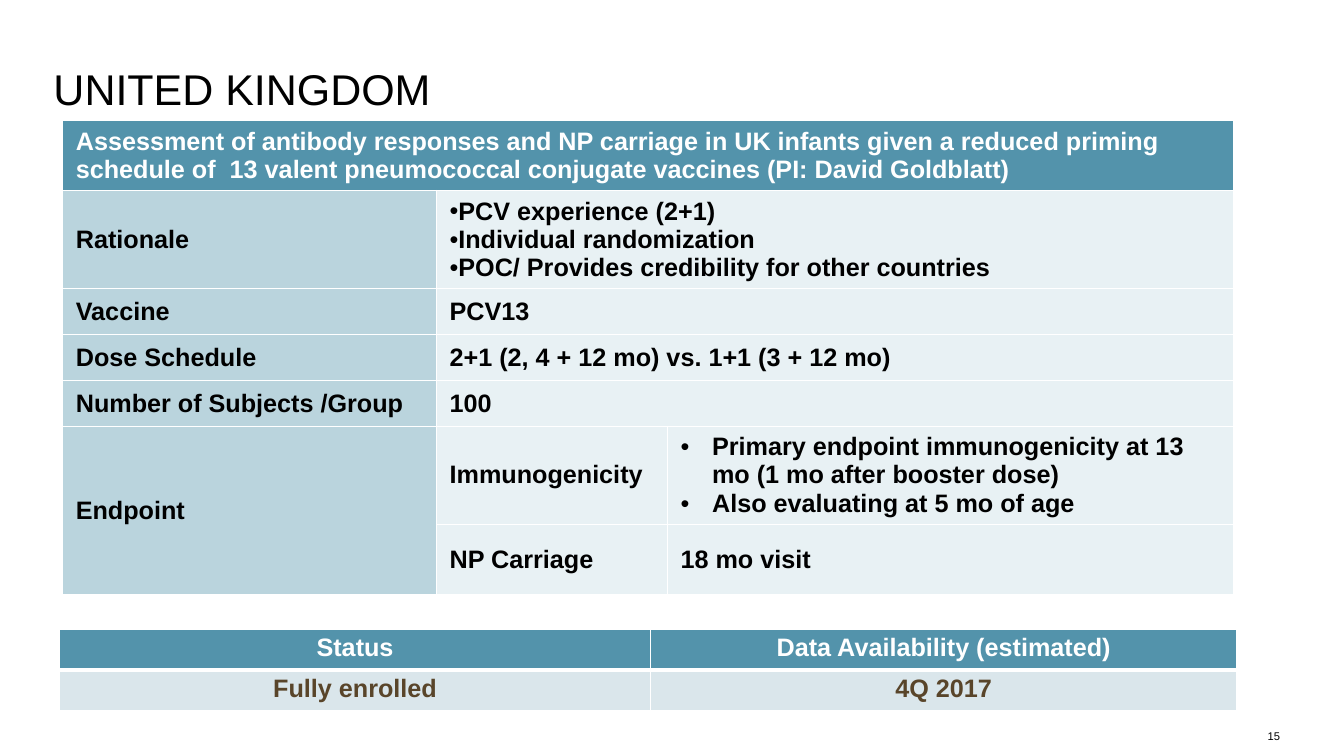
from lxml import etree
from pptx import Presentation
from pptx.dml.color import RGBColor
from pptx.enum import text
from pptx.oxml import ns
from pptx.util import Pt

COLORS = {
    "header": "5393AB", "label": "BAD4DD", "value": "E8F1F4", "status": "DAE6EB",
    "white": "FFFFFF", "black": "000000", "brown": "59452A",
}
MIDDLE, TOP = text.MSO_ANCHOR.MIDDLE, text.MSO_ANCHOR.TOP
LEFT, CENTER, RIGHT = text.PP_ALIGN.LEFT, text.PP_ALIGN.CENTER, text.PP_ALIGN.RIGHT


def write(frame, lines, size, color="black", bold=False, align=LEFT, hang=None):
    """Fill a text frame; hang is the bullet indent in points, None for no bullets."""
    for i, line in enumerate(lines):
        para = frame.paragraphs[0] if i == 0 else frame.add_paragraph()
        para.alignment = align
        if hang is not None:
            props = para._p.get_or_add_pPr()
            props.set("marL", str(Pt(hang)))
            props.set("indent", str(-Pt(hang)))
            etree.SubElement(props, ns.qn("a:buFont"), typeface="Arial")
            etree.SubElement(props, ns.qn("a:buChar"), char="•")
        run = para.add_run()
        run.text = line
        run.font.name, run.font.size, run.font.bold = "Arial", Pt(size), bold
        run.font.color.rgb = RGBColor.from_string(COLORS[color])


def add_grid(left, top, widths, heights, fills, bottom_lines):
    """Add a table with white rules; fills holds one list of colour names per row."""
    grid = slide.shapes.add_table(len(heights), len(widths), Pt(left), Pt(top),
                                  Pt(sum(widths)), Pt(sum(heights))).table
    grid.horz_banding = False
    for column, width in zip(grid.columns, widths):
        column.width = Pt(width)
    for r, height in enumerate(heights):
        grid.rows[r].height = Pt(height)
        for c, fill in enumerate(fills[r]):
            cell = grid.cell(r, c)
            cell.fill.solid()
            cell.fill.fore_color.rgb = RGBColor.from_string(COLORS[fill])
            props = cell._tc.get_or_add_tcPr()
            top_line = bottom_lines[r - 1] if r else 1
            rules = {"lnL": 1, "lnR": 1, "lnT": top_line, "lnB": bottom_lines[r]}
            for i, (side, weight) in enumerate(rules.items()):
                rule = etree.Element(ns.qn("a:" + side), w=str(Pt(weight)))
                paint = etree.SubElement(rule, ns.qn("a:solidFill"))
                etree.SubElement(paint, ns.qn("a:srgbClr"), val=COLORS["white"])
                props.insert(i, rule)
    return grid


prs = Presentation()
prs.slide_width, prs.slide_height = Pt(960), Pt(540)
slide = prs.slides.add_slide(prs.slide_layouts[6])

# Study table: row, column, rows spanned, columns spanned, lines, bullet indent
study_cells = [
    (0, 0, 1, 3, ["Assessment of antibody responses and NP carriage in UK infants given "
                  "a reduced priming schedule of  13 valent pneumococcal conjugate "
                  "vaccines (PI: David Goldblatt)"], None),
    (1, 0, 1, 1, ["Rationale"], None),
    (1, 1, 1, 2, ["PCV experience (2+1)", "Individual randomization",
                  "POC/ Provides credibility for other countries"], 0),
    (2, 0, 1, 1, ["Vaccine"], None),
    (2, 1, 1, 2, ["PCV13"], None),
    (3, 0, 1, 1, ["Dose Schedule"], None),
    (3, 1, 1, 2, ["2+1 (2, 4 + 12 mo) vs. 1+1 (3 + 12 mo)"], None),
    (4, 0, 1, 1, ["Number of Subjects /Group"], None),
    (4, 1, 1, 2, ["100"], None),
    (5, 0, 2, 1, ["Endpoint"], None),
    (5, 1, 1, 1, ["Immunogenicity"], None),
    (5, 2, 1, 1, ["Primary endpoint immunogenicity at 13 mo (1 mo after booster dose)",
                  "Also evaluating at 5 mo of age"], 22.5),
    (6, 1, 1, 1, ["NP Carriage"], None),
    (6, 2, 1, 1, ["18 mo visit"], None),
]
study = add_grid(44.8, 86.1, [267, 165, 404.5], [50, 70, 32.8, 32.8, 32.8, 70, 50.6],
                 [["header"] * 3] + [["label", "value", "value"]] * 6, [1] * 7)
for row, col, tall, wide, lines, hang in study_cells:
    cell = study.cell(row, col)
    if tall * wide > 1:
        cell.merge(study.cell(row + tall - 1, col + wide - 1))
    cell.vertical_anchor = MIDDLE
    cell.margin_left = cell.margin_right = Pt(9.4)
    cell.margin_top = cell.margin_bottom = Pt(4.6)
    write(cell.text_frame, lines, 18, "white" if row == 0 else "black", True, hang=hang)

# Status table
status = add_grid(42.7, 449.3, [421.9, 419], [29.2, 29.2],
                  [["header"] * 2, ["status"] * 2], [3, 1])
status_rows = [("white", ["Status", "Data Availability (estimated)"]),
               ("brown", ["Fully enrolled", "4Q 2017"])]
for row, (color, entries) in enumerate(status_rows):
    for col, entry in enumerate(entries):
        write(status.cell(row, col).text_frame, [entry], 18, color, True, CENTER)

# Title and page number
for left, top, width, height, anchor, align, size, words in [
    (38.2, 51.1, 874.8, 54.7, TOP, LEFT, 30.7, "UNITED KINGDOM"),
    (894.2, 514.1, 20.2, 16.6, text.MSO_ANCHOR.BOTTOM, RIGHT, 8, "15"),
]:
    frame = slide.shapes.add_textbox(Pt(left), Pt(top), Pt(width), Pt(height)).text_frame
    frame.word_wrap = True
    frame.vertical_anchor = anchor
    frame.margin_left = frame.margin_right = frame.margin_top = frame.margin_bottom = 0
    write(frame, [words], size, align=align)
    frame.paragraphs[0].line_spacing = Pt(size) if size > 8 else 1.0

prs.save("out.pptx")
